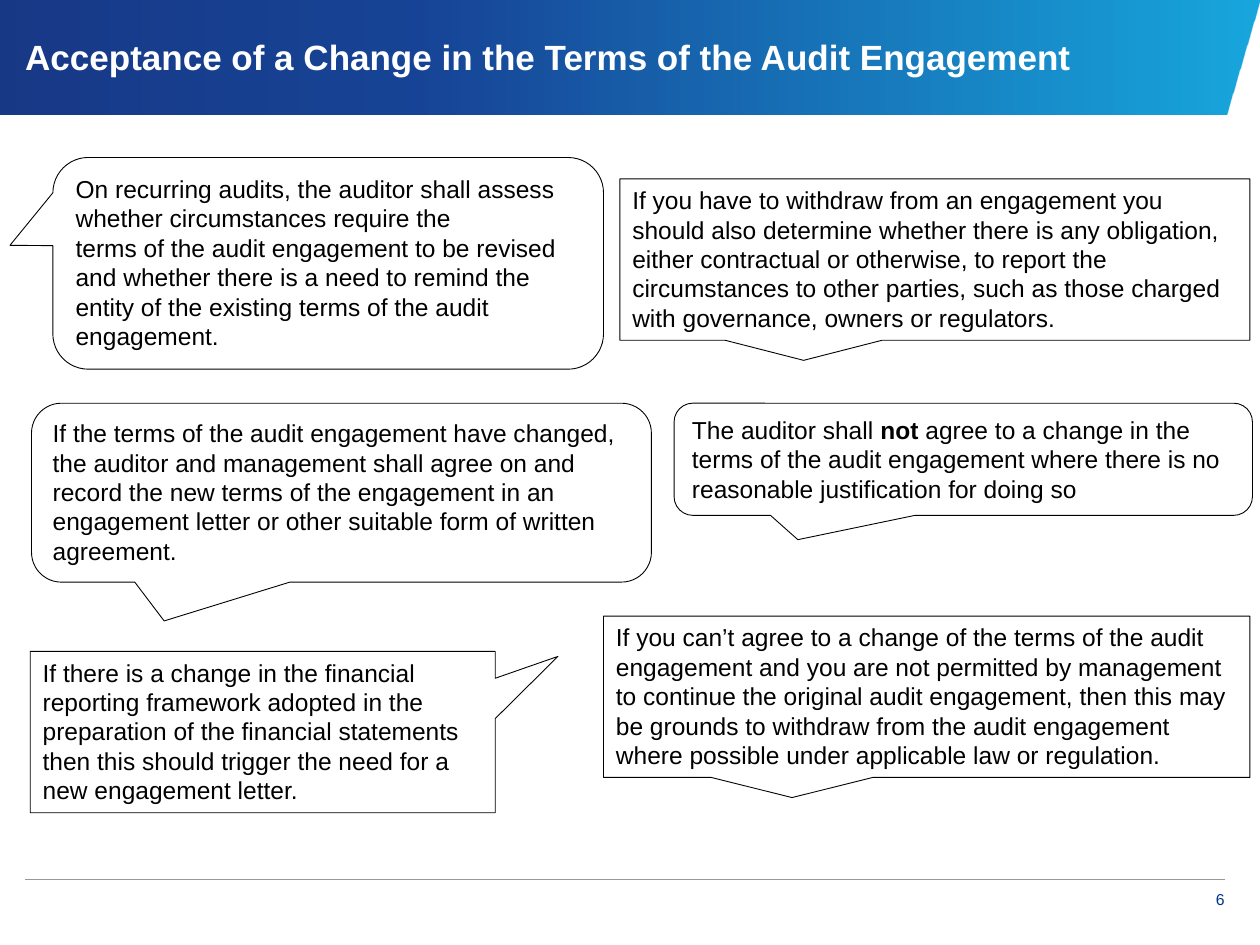
from dataclasses import dataclass

import pptx
import pptx.dml.color
import pptx.enum.shapes
import pptx.enum.text
import pptx.oxml
import pptx.oxml.ns
import pptx.util
from lxml import etree

Inches = pptx.util.Inches
Pt = pptx.util.Pt
Kind = pptx.enum.shapes.MSO_SHAPE
Align = pptx.enum.text.PP_ALIGN
Anchor = pptx.enum.text.MSO_ANCHOR
Fit = pptx.enum.text.MSO_AUTO_SIZE
qn = pptx.oxml.ns.qn


@dataclass(frozen=True)
class Theme:
    font: str = "Arial"
    ink: str = "000000"
    paper: str = "FFFFFF"
    navy: str = "00338D"
    rule: str = "97989A"
    band: tuple = ((0, "00257A"), (35, "00338D"), (100, "009FDA"))
    alpha: int = 90
    title: int = 20
    body: int = 14
    small: int = 9


THEME = Theme()
ROUND = Kind.ROUNDED_RECTANGULAR_CALLOUT
RECT = Kind.RECTANGULAR_CALLOUT
TAIL = (-0.286, 0.717, 0.167)

# kind, box, adjustments (None keeps the preset), paragraphs
NOTES = (
    (ROUND, (0.42, 1.25, 4.37, 1.68), (-0.578, -0.085, 0.167), (
        "On recurring audits, the auditor shall assess whether circumstances "
        "require the",
        "terms of the audit engagement to be revised and whether there is a "
        "need to remind the entity of the existing terms of the audit "
        "engagement.")),
    (ROUND, (0.25, 3.2, 4.92, 1.42), TAIL, (
        "If the terms of the audit engagement have changed, the auditor and "
        "management shall agree on and record the new terms of the engagement "
        "in an engagement letter or other suitable form of written "
        "agreement.",)),
    (RECT, (0.24, 5.17, 3.69, 1.28), (0.635, -0.469), (
        "If there is a change in the financial reporting framework adopted "
        "in the",
        "preparation of the financial statements then this should trigger "
        "the need for a new engagement letter.")),
    (RECT, (4.92, 1.42, 5, 1.28), None, (
        "If you have to withdraw from an engagement you should also determine "
        "whether there is any obligation, either contractual or otherwise, to "
        "report the circumstances to other parties, such as those charged "
        "with governance, owners or regulators.",)),
    (ROUND, (5.35, 3.2, 4.59, 0.89), TAIL, (
        "The auditor shall *not* agree to a change in the terms of the audit "
        "engagement where there is no reasonable justification for doing so",)),
    (RECT, (4.79, 4.89, 5.13, 1.28), None, (
        "If you can’t agree to a change of the terms of the audit engagement "
        "and you are not permitted by management to continue the original "
        "audit engagement, then this may be grounds to withdraw from the "
        "audit engagement where possible under applicable law or "
        "regulation.",)),
)


def color(code):
    return pptx.dml.color.RGBColor.from_string(code)


def write(shape, lines, size=THEME.body, ink=THEME.ink, bold=False,
          align=Align.LEFT, anchor=Anchor.TOP, inset=(0, 0, 0, 0),
          fit=Fit.NONE):
    """Fill a shape with paragraphs; words between asterisks are bold."""
    frame = shape.text_frame
    frame.word_wrap = True
    frame.auto_size = fit
    frame.vertical_anchor = anchor
    (frame.margin_left, frame.margin_top,
     frame.margin_right, frame.margin_bottom) = map(Inches, inset)
    for i, line in enumerate(lines):
        para = frame.add_paragraph() if i else frame.paragraphs[0]
        para.alignment = align
        for j, part in enumerate(line.split("*")):
            run = para.add_run()
            run.text = part
            run.font.name = THEME.font
            run.font.size = Pt(size)
            run.font.bold = bold or j % 2 == 1
            run.font.color.rgb = color(ink)


def label(slide, box, text, **style):
    write(slide.shapes.add_textbox(*map(Inches, box)), [text], **style)


def banner(slide):
    pen = slide.shapes.build_freeform(0, 0, scale=Inches(1) / 100)
    pen.add_line_segments([(0, 91), (973, 91), (1000, 0)], close=True)
    shape = pen.convert_to_shape()
    shape.shadow.inherit = False
    shape.line.fill.background()
    shape.fill.gradient()
    shape.fill.gradient_angle = 0
    stops = next(shape.element.spPr.iter(qn("a:gsLst")))
    for old in list(stops):
        stops.remove(old)
    for pos, code in THEME.band:
        stop = etree.SubElement(stops, qn("a:gs"), pos=str(pos * 1000))
        tint = etree.SubElement(stop, qn("a:srgbClr"), val=code)
        etree.SubElement(tint, qn("a:alpha"), val=str(THEME.alpha * 1000))


def rule(slide, left, right, top):
    line = slide.shapes.add_connector(
        pptx.enum.shapes.MSO_CONNECTOR.STRAIGHT,
        Inches(left), Inches(top), Inches(right), Inches(top))
    line.line.color.rgb = color(THEME.rule)
    line.line.width = Pt(0.25)
    etree.SubElement(line.element.spPr, qn("a:effectLst"))


def note(slide, kind, box, tail, lines):
    shape = slide.shapes.add_shape(kind, *map(Inches, box))
    shape.shadow.inherit = False
    for i, value in enumerate(tail or ()):
        shape.adjustments[i] = value
    shape.fill.solid()
    shape.fill.fore_color.rgb = color(THEME.paper)
    shape.line.color.rgb = color(THEME.ink)
    shape.line.width = Pt(0.5)
    write(shape, lines, inset=(0.1, 0.05, 0.1, 0.05),
          fit=Fit.SHAPE_TO_FIT_TEXT)


def main():
    deck = pptx.Presentation()
    deck.slide_width, deck.slide_height = Inches(10), Inches(7.5)
    slide = deck.slides.add_slide(deck.slide_layouts[6])
    banner(slide)
    rule(slide, 0.2, 9.72, 6.98)
    label(slide, (9.17, 6.98, 0.55, 0.31), "6", size=THEME.small,
          ink=THEME.navy, align=Align.RIGHT, inset=(0.08, 0.08, 0, 0))
    label(slide, (0.2, 0.13, 9.53, 0.63),
          "Acceptance of a Change in the Terms of the Audit Engagement",
          size=THEME.title, ink=THEME.paper, bold=True, anchor=Anchor.MIDDLE)
    for item in NOTES:
        note(slide, *item)
    deck.save("out.pptx")


if __name__ == "__main__":
    main()
